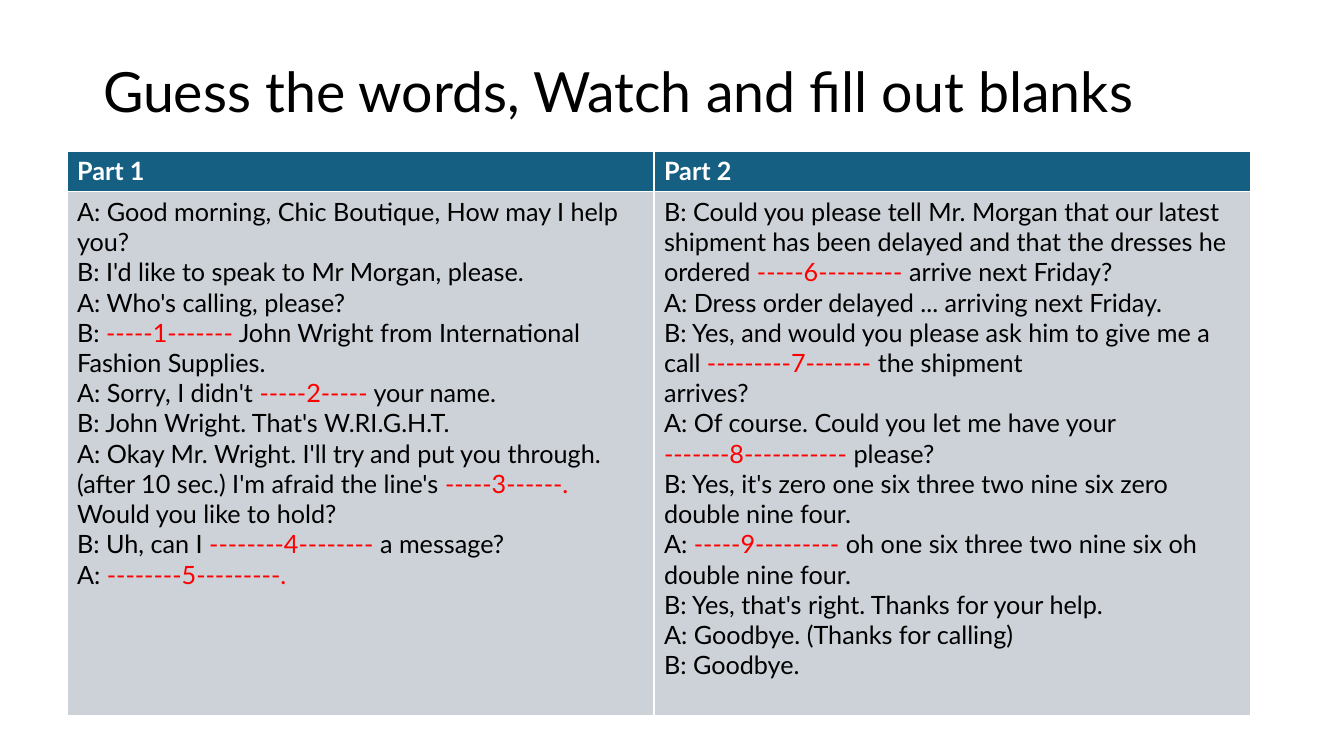
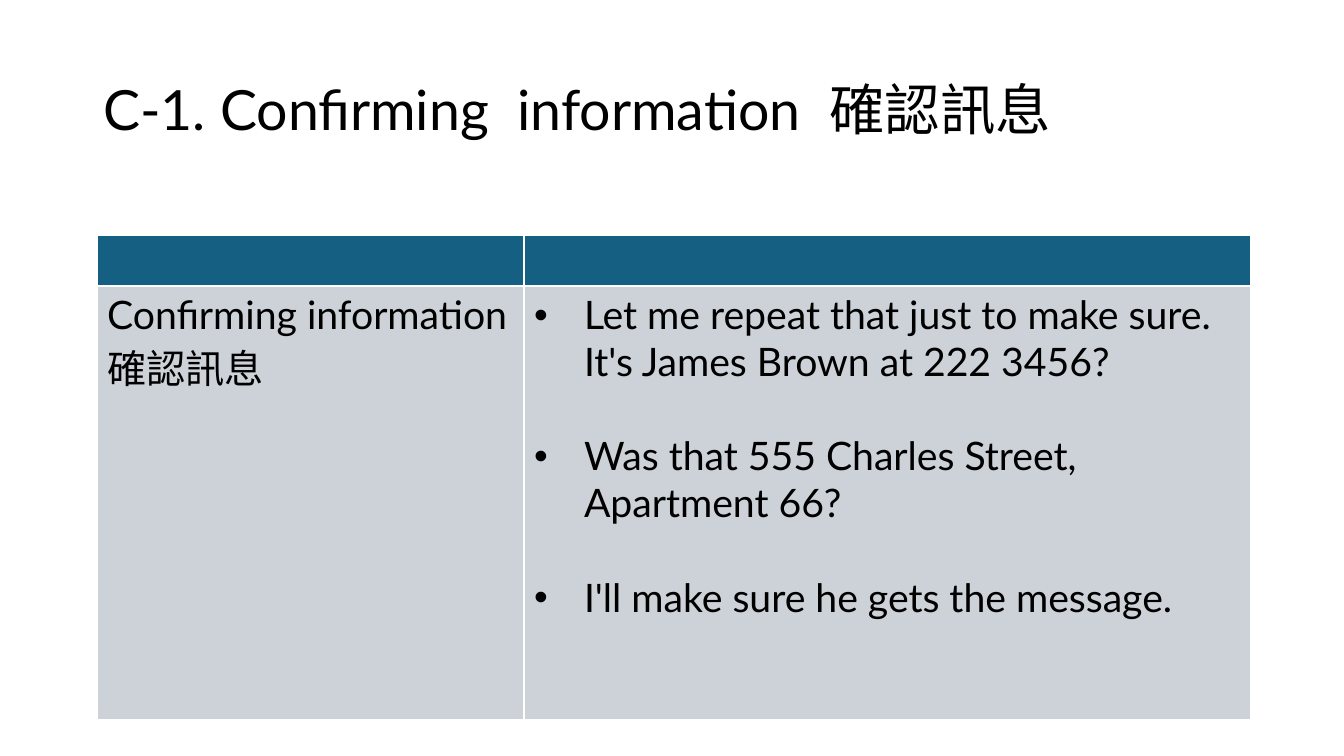
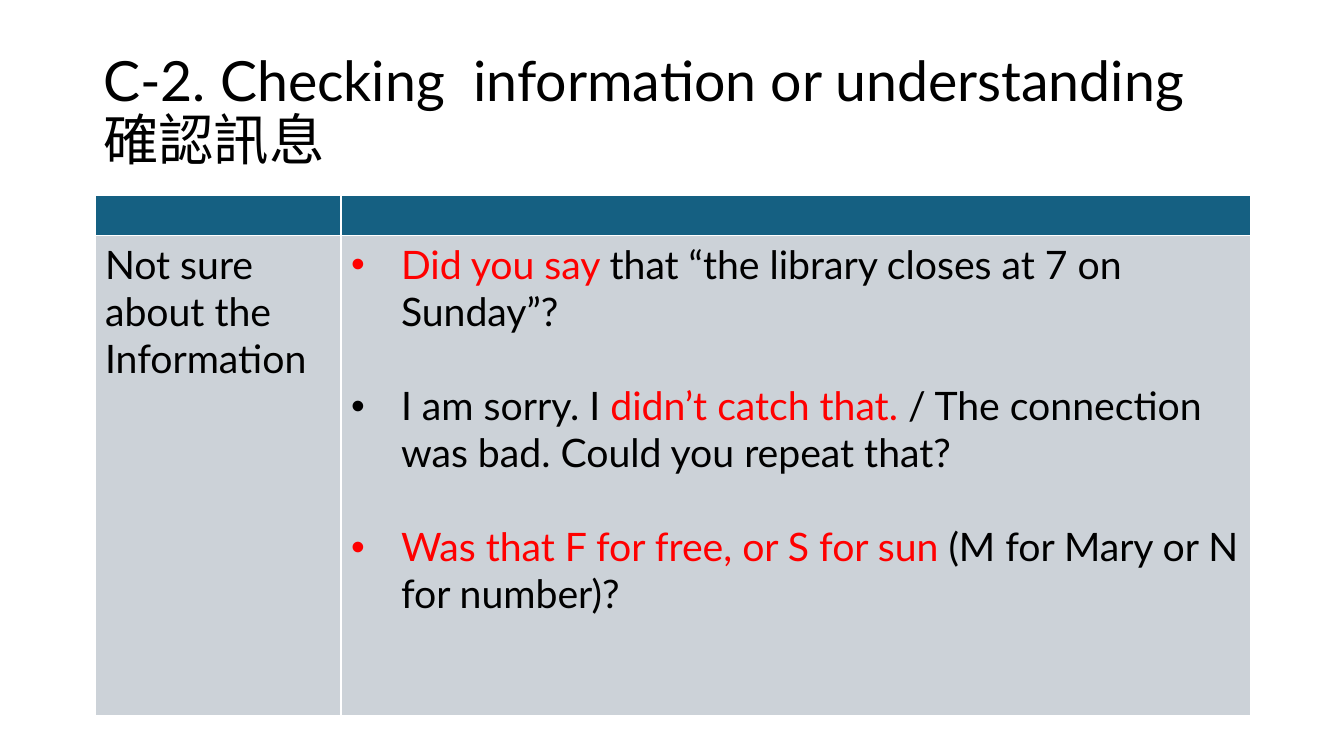
from lxml.etree import SubElement
from pptx import Presentation
from pptx.dml.color import RGBColor
from pptx.enum.text import MSO_ANCHOR, MSO_AUTO_SIZE, PP_ALIGN
from pptx.oxml.ns import qn
from pptx.util import Pt

SCALE = 914400 / 100.8
LATIN, CJK = "Lato", "Arial"
BLACK, WHITE, RED = "000000", "FFFFFF", "FF0000"
HEADER, BODY = "156082", "CCD2D8"
RIGHT = 1251

# In cell text, "|" switches between black and red.
CALL_START = [
    "A: Good morning, Chic Boutique, How may I help you?",
    "B: I'd like to speak to Mr Morgan, please.",
    "A: Who's calling, please?",
    "B: |-----1-------| John Wright from International Fashion Supplies.",
    "A: Sorry, I didn't |-----2-----| your name.",
    "B: John Wright. That's W.RI.G.H.T.",
    "A: Okay Mr. Wright. I'll try and put you through. (after 10 sec.) "
    "I'm afraid the line's |-----3------.| Would you like to hold?",
    "B: Uh, can I |--------4--------| a message?",
    "A: |--------5---------.",
]
CALL_END = [
    "B: Could you please tell Mr. Morgan that our latest shipment has been "
    "delayed and that the dresses he ordered |-----6---------| arrive next Friday?",
    "A: Dress order delayed ... arriving next Friday.",
    "B: Yes, and would you please ask him to give me a call "
    "|---------7-------| the shipment",
    "arrives?",
    "A: Of course. Could you let me have your |-------8-----------| please?",
    "B: Yes, it's zero one six three two nine six zero double nine four.",
    "A: |-----9---------| oh one six three two nine six oh double nine four.",
    "B: Yes, that's right. Thanks for your help.",
    "A: Goodbye. (Thanks for calling)",
    "B: Goodbye.",
]
CONFIRMING = [
    "Let me repeat that just to make sure. It's James Brown at 222 3456?",
    "Was that 555 Charles Street, Apartment 66?",
    "I'll make sure he gets the message.",
]
CHECKING = [
    "|Did you say |that “the library closes at 7 on Sunday”?",
    "I am sorry. I |didn’t catch that. |/ The connection was bad. "
    "Could you repeat that?",
    "|Was that F for free, or S for sun |(M for Mary or N for number)?",
]


def px(n):
    return round(n * SCALE)


def rgb(color):
    return RGBColor.from_string(color)


def style(font, size, color=None, bold=None, name=LATIN):
    font.name, font.size, font.bold = name, Pt(size), bold
    if color:
        font.color.rgb = rgb(color)


def add_run(p, text, size, color, bold=None):
    r = p.add_run()
    r.text = text
    style(r.font, size, color, bold, LATIN if text.isascii() or "“" in text
          or "’" in text else CJK)


def add_bullet(p):
    pPr = p._p.get_or_add_pPr()
    pPr.set("marL", str(px(50)))
    pPr.set("indent", str(-px(50)))
    SubElement(pPr, qn("a:buFont")).set("typeface", "Arial")
    SubElement(pPr, qn("a:buChar")).set("char", "•")


def add_slide(prs, title, chinese="", height=146, new_line=False):
    s = prs.slides.add_slide(prs.slide_layouts[5])
    box = s.shapes.title
    box.left, box.top, box.width, box.height = map(px, (93, 40, 1159, height))
    tf = box.text_frame
    tf.auto_size, tf.word_wrap = MSO_AUTO_SIZE.NONE, True
    tf.vertical_anchor = MSO_ANCHOR.MIDDLE
    p = tf.paragraphs[0]
    p.alignment, p.line_spacing = PP_ALIGN.LEFT, 0.9
    add_run(p, title, 39.6, BLACK)
    if new_line:
        p.add_line_break()
    if chinese:
        add_run(p, chinese, 39.6, BLACK)
    return s


def fill_cell(cell, fill, lines=(), size=18, color=BLACK, bold=None, bullets=False):
    cell.fill.solid()
    cell.fill.fore_color.rgb = rgb(fill)
    tf = cell.text_frame
    for i, line in enumerate(lines):
        p = tf.add_paragraph() if i else tf.paragraphs[0]
        if bullets:
            p.space_after = Pt(size * 1.2)
            add_bullet(p)
        for j, part in enumerate(line.split("|")):
            if part:
                add_run(p, part, size, RED if j % 2 else color, bold)


def add_grid(s, left, top, split, bottom, header_height, headers, columns,
             size, bullets=False):
    """Two-column table; split is the x of the line between the columns."""
    widths, heights = (split - left, RIGHT - split), (header_height, bottom - top - header_height)
    table = s.shapes.add_table(2, 2, px(left), px(top), px(RIGHT - left),
                               px(bottom - top)).table
    for row, height in zip(table.rows, heights):
        row.height = px(height)
    for i, (width, header, lines) in enumerate(zip(widths, headers, columns)):
        table.columns[i].width = px(width)
        fill_cell(table.cell(0, i), HEADER, [header], 18, WHITE, True)
        fill_cell(table.cell(1, i), BODY, lines, size, bullets=bullets and i == 1)


def main():
    prs = Presentation()
    prs.slide_width, prs.slide_height = px(1344), px(756)

    s = add_slide(prs, "Guess the words, Watch and fill out blanks", height=109)
    add_grid(s, 67, 151, 654, 715, 40, ("Part 1", "Part 2"),
             (CALL_START, CALL_END), 18)

    s = add_slide(prs, "C-1. Confirming  information  ", "確認訊息")
    add_grid(s, 97, 235, 524, 720, 51, ("", ""),
             (["Confirming information", "確認訊息"], CONFIRMING), 28, True)

    s = add_slide(prs, "C-2. Checking  information or understanding", "確認訊息",
                  new_line=True)
    add_grid(s, 95, 195, 341, 715, 40, ("", ""),
             (["Not sure about the Information"], CHECKING), 28, True)

    prs.save("out.pptx")


if __name__ == "__main__":
    main()
